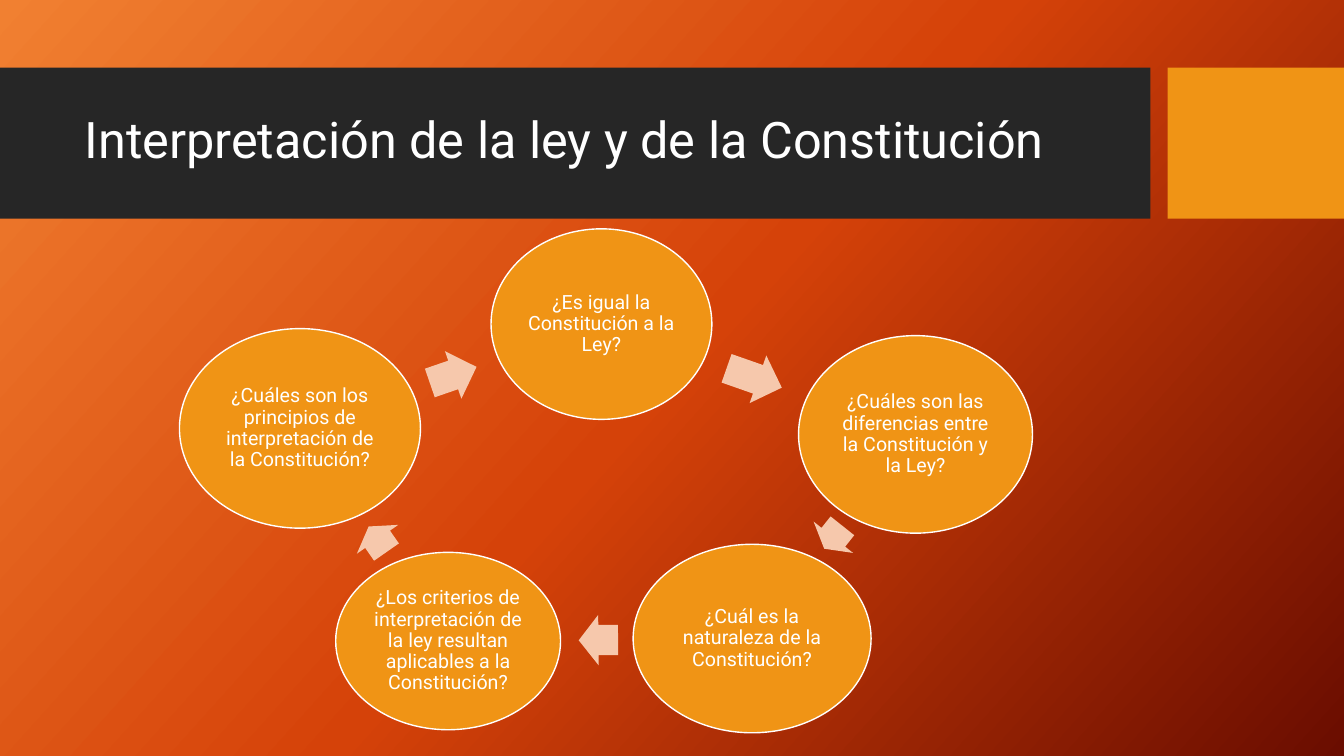
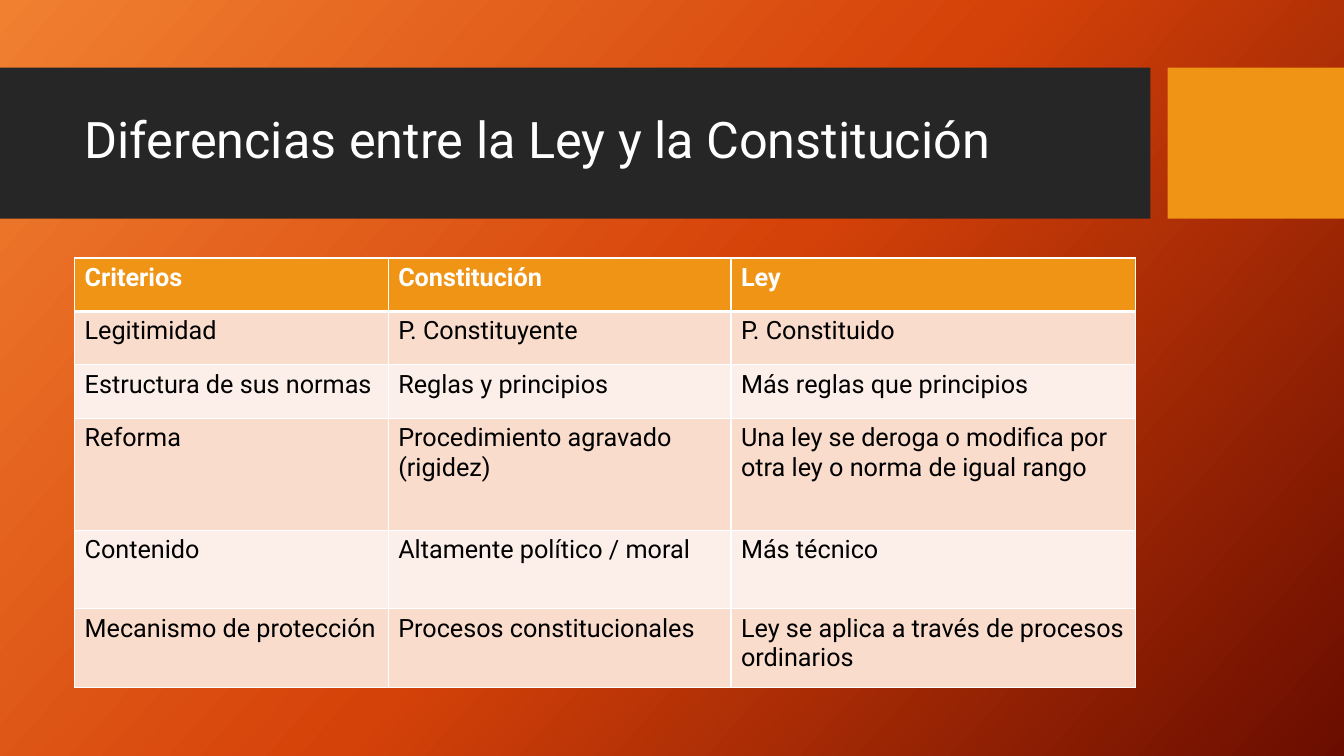
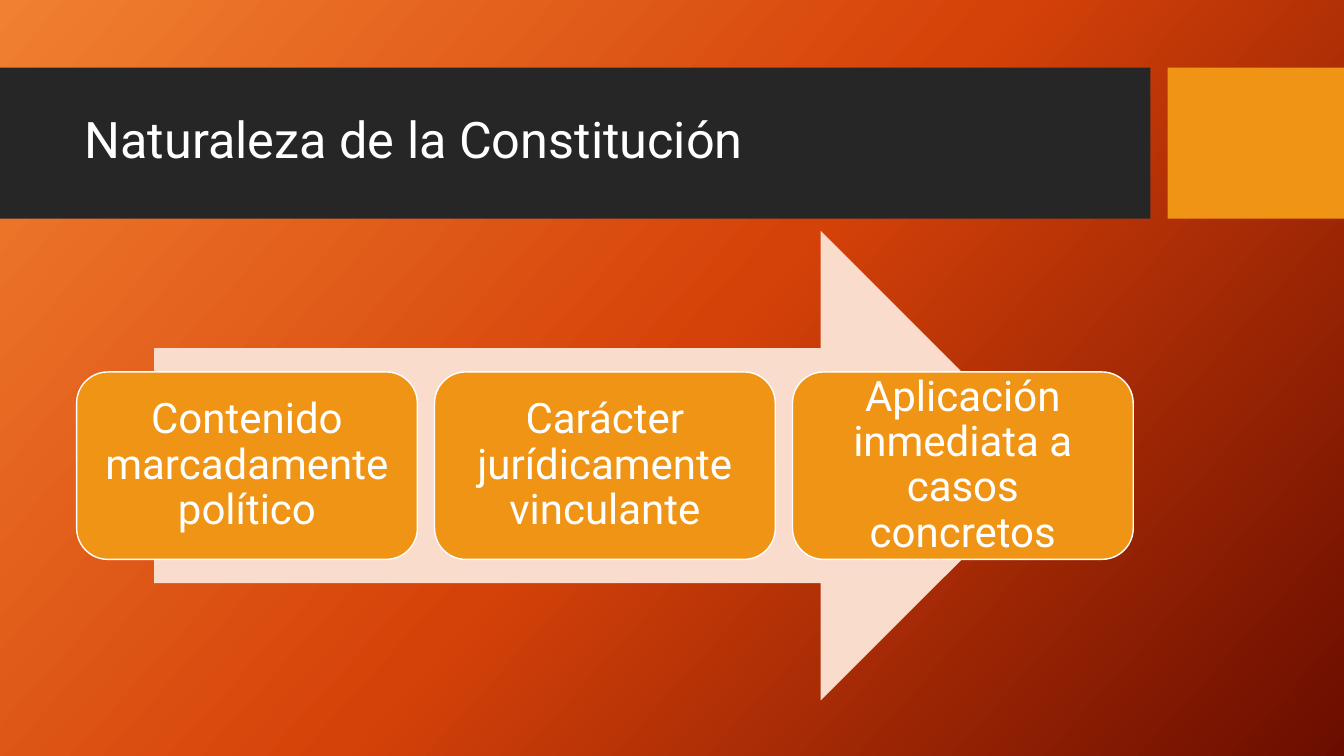
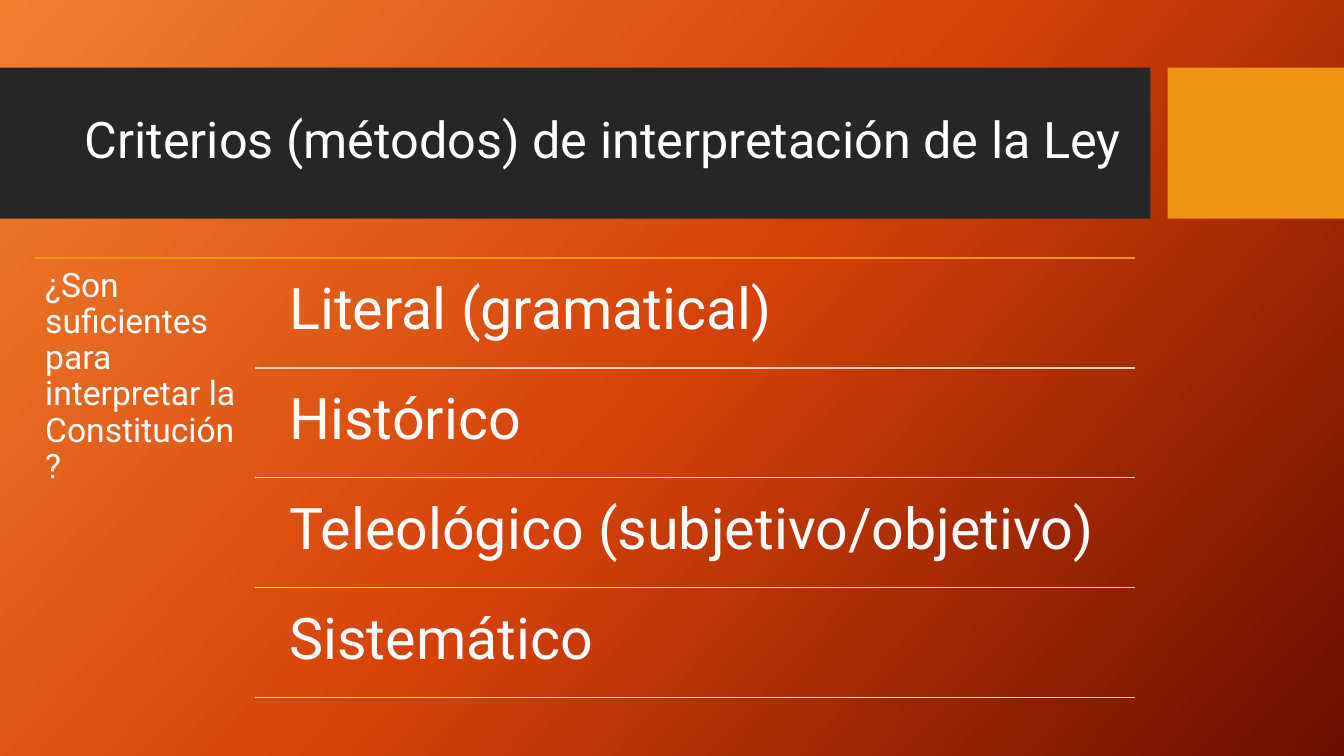
from copy import deepcopy

from lxml import etree
from pptx import Presentation
from pptx.dml.color import RGBColor
from pptx.enum.shapes import MSO_CONNECTOR, MSO_SHAPE
from pptx.enum.text import MSO_ANCHOR, PP_ALIGN
from pptx.oxml.ns import qn
from pptx.util import Inches, Pt

RECTANGLE, ROUNDED = MSO_SHAPE.RECTANGLE, MSO_SHAPE.ROUNDED_RECTANGLE
ELLIPSE, ARROW = MSO_SHAPE.OVAL, MSO_SHAPE.RIGHT_ARROW
STRAIGHT = MSO_CONNECTOR.STRAIGHT
TOP, MIDDLE = MSO_ANCHOR.TOP, MSO_ANCHOR.MIDDLE
LEFT, CENTER = PP_ALIGN.LEFT, PP_ALIGN.CENTER

# Shared style
FONT = "Roboto"
WHITE, BLACK, CHARCOAL, ORANGE = "FFFFFF", "000000", "262626", "F09415"
PEACH, PALE_PEACH, LIGHTEST_PEACH, RULE_PEACH = "F6C8AC", "F9DCCC", "FCEEE8", "F8D2BD"
BACKGROUND = [(0, "F18031"), (0.5, "D54209"), (1, "6A0D00")]
BACKGROUND_ANGLE = 318  # counter-clockwise degrees
BANDS = [((0, 0.67, 11.41, 1.5), CHARCOAL), ((11.58, 0.67, 1.75, 1.5), ORANGE)]
TITLE_BOX = (0.74, 0.82, 10.51, 1.18)

# Slide 1: questions in a cycle, and the arrows between them
CYCLE_TITLE = "Interpretación de la ley y de la Constitución"
QUESTIONS = [
    ("¿Es igual la Constitución a la Ley?", (4.87, 2.27, 2.19, 1.89)),
    ("¿Cuáles son las diferencias entre la Constitución y la Ley?", (7.92, 3.33, 2.32, 1.96)),
    ("¿Cuál es la naturaleza de la Constitución?", (6.28, 5.4, 2.36, 1.87)),
    ("¿Los criterios de interpretación de la ley resultan aplicables a la Constitución?",
     (3.33, 5.48, 2.23, 1.76)),
    ("¿Cuáles son los principios de interpretación de la Constitución?",
     (1.78, 3.26, 2.39, 1.98)),
]
CYCLE_ARROWS = [  # box, rotation
    ((7.19, 3.5, 0.58, 0.5), 19.3),
    ((8.12, 5.08, 0.29, 0.5), 128.5),
    ((5.74, 6.1, 0.39, 0.5), 179.5),
    ((3.59, 5.1, 0.31, 0.5), 235.1),
    ((4.25, 3.47, 0.49, 0.5), 341),
]

# Slide 2: comparison table
TABLE_TITLE = "Diferencias entre la Ley y la Constitución"
TABLE_BOX = (0.74, 2.56, 10.51, 4.25)
COLUMN_WIDTHS = [3.11, 3.4, 4.01]
ROW_HEIGHTS = [0.53, 0.53, 0.53, 1.11, 0.78, 0.78]
COMPARISON = [
    ("Criterios", "Constitución", "Ley"),
    ("Legitimidad", "P. Constituyente", "P. Constituido"),
    ("Estructura de sus normas", "Reglas y principios", "Más reglas que principios"),
    ("Reforma", "Procedimiento agravado (rigidez)",
     "Una ley se deroga o modifica por otra ley o norma de igual rango"),
    ("Contenido", "Altamente político / moral", "Más técnico"),
    ("Mecanismo de protección", "Procesos constitucionales",
     "Ley se aplica a través de procesos ordinarios"),
]

# Slide 3: features along an arrow
NATURE_TITLE = "Naturaleza de la Constitución"
NATURE_ARROW = (1.53, 2.29, 8.94, 4.66)
FEATURES = [
    "Contenido marcadamente político",
    "Carácter jurídicamente vinculante",
    "Aplicación inmediata a casos concretos",
]
FEATURE_LEFT, FEATURE_TOP, FEATURE_PITCH = 0.76, 3.69, 3.55
FEATURE_WIDTH, FEATURE_HEIGHT = 3.38, 1.86

# Slide 4: a question beside a ruled list
CRITERIA_TITLE = "Criterios (métodos) de interpretación de la Ley"
SIDE_QUESTION = "¿Son suficientes para interpretar la Constitución?"
CRITERIA = ["Literal (gramatical)", "Histórico", "Teleológico (subjetivo/objetivo)", "Sistemático"]
LIST_LEFT, LIST_RIGHT, LIST_TOP = 0.35, 11.26, 2.56
RULE_LEFT, CRITERION_LEFT = 2.53, 2.7
CRITERION_PITCH, CRITERION_HEIGHT, CRITERION_GAP = 1.09, 1.04, 0.05


def color(value):
    return RGBColor.from_string(value)


def inches(box):
    return [Inches(length) for length in box]


def write(frame, text, size=18, fill=WHITE, bold=False, align=LEFT, spacing=0.9):
    paragraph = frame.paragraphs[0]
    paragraph.alignment = align
    paragraph.line_spacing = spacing
    run = paragraph.add_run()
    run.text = text
    run.font.name = FONT
    run.font.size = Pt(size)
    run.font.bold = bold
    run.font.color.rgb = color(fill)


def set_frame(frame, anchor, inset=None):
    frame.word_wrap = True
    frame.vertical_anchor = anchor
    if inset is not None:
        frame.margin_left = frame.margin_right = Inches(inset)
        frame.margin_top = frame.margin_bottom = Inches(inset)


def add_text(slide, box, text, anchor=TOP, inset=None, **text_format):
    frame = slide.shapes.add_textbox(*inches(box)).text_frame
    set_frame(frame, anchor, inset)
    write(frame, text, **text_format)


def add_shape(slide, kind, box, fill, outline=None):
    shape = slide.shapes.add_shape(kind, *inches(box))
    shape.shadow.inherit = False
    shape.fill.solid()
    shape.fill.fore_color.rgb = color(fill)
    if outline:
        shape.line.color.rgb = color(outline)
        shape.line.width = Pt(1)
    else:
        shape.line.fill.background()
    return shape


def add_label(slide, kind, box, text, inset, size):
    shape = add_shape(slide, kind, box, ORANGE, outline=WHITE)
    set_frame(shape.text_frame, MIDDLE, inset)
    write(shape.text_frame, text, size=size, align=CENTER)


def add_rule(slide, left, top, fill):
    rule = slide.shapes.add_connector(STRAIGHT, *inches((left, top, LIST_RIGHT, top)))
    rule.line.color.rgb = color(fill)
    rule.line.width = Pt(1)
    etree.SubElement(rule.element.spPr, qn("a:effectLst"))


def set_background(master):
    fill = master.background.fill
    fill.gradient()
    fill.gradient_angle = BACKGROUND_ANGLE
    stop_list = master.element.find(".//" + qn("a:gsLst"))
    stop_list.insert(1, deepcopy(stop_list[0]))
    for stop, (position, value) in zip(fill.gradient_stops, BACKGROUND):
        stop.position = position
        stop.color.rgb = color(value)


def add_slide(presentation, title):
    slide = presentation.slides.add_slide(presentation.slide_layouts[6])
    for box, fill in BANDS:
        add_shape(slide, RECTANGLE, box, fill)
    add_text(slide, TITLE_BOX, title, anchor=MIDDLE, size=36)
    return slide


def set_borders(cell, top, bottom):
    properties = cell._tc.get_or_add_tcPr()
    edges = [("a:lnL", 1), ("a:lnR", 1), ("a:lnT", top), ("a:lnB", bottom)]
    for index, (tag, width) in enumerate(edges):
        edge = etree.Element(qn(tag), w=str(Pt(width)))
        solid = etree.SubElement(edge, qn("a:solidFill"))
        etree.SubElement(solid, qn("a:srgbClr"), val=WHITE)
        properties.insert(index, edge)


def build_cycle(presentation):
    slide = add_slide(presentation, CYCLE_TITLE)
    for question, box in QUESTIONS:
        add_label(slide, ELLIPSE, box, question, inset=0.02, size=14)
    for box, rotation in CYCLE_ARROWS:
        arrow = add_shape(slide, ARROW, box, PEACH)
        arrow.adjustments[0] = 0.6
        arrow.rotation = rotation


def build_table(presentation):
    slide = add_slide(presentation, TABLE_TITLE)
    table = slide.shapes.add_table(
        len(COMPARISON), len(COLUMN_WIDTHS), *inches(TABLE_BOX)).table
    for column, width in zip(table.columns, COLUMN_WIDTHS):
        column.width = Inches(width)
    for row, height in zip(table.rows, ROW_HEIGHTS):
        row.height = Inches(height)
    for row_index, texts in enumerate(COMPARISON):
        header = row_index == 0
        band = PALE_PEACH if row_index % 2 else LIGHTEST_PEACH
        for column_index, text in enumerate(texts):
            cell = table.cell(row_index, column_index)
            cell.fill.solid()
            cell.fill.fore_color.rgb = color(ORANGE if header else band)
            set_borders(cell, top=3 if row_index == 1 else 1, bottom=3 if header else 1)
            write(cell.text_frame, text, fill=WHITE if header else BLACK,
                  bold=header, spacing=1.0)


def build_nature(presentation):
    slide = add_slide(presentation, NATURE_TITLE)
    add_shape(slide, ARROW, NATURE_ARROW, PALE_PEACH)
    for index, feature in enumerate(FEATURES):
        left = FEATURE_LEFT + index * FEATURE_PITCH
        box = (left, FEATURE_TOP, FEATURE_WIDTH, FEATURE_HEIGHT)
        add_label(slide, ROUNDED, box, feature, inset=0.12, size=30)


def build_criteria(presentation):
    slide = add_slide(presentation, CRITERIA_TITLE)
    add_rule(slide, LIST_LEFT, LIST_TOP, ORANGE)
    add_text(slide, (LIST_LEFT, LIST_TOP, 2.18, 4.43), SIDE_QUESTION, inset=0.1, size=24)
    for index, criterion in enumerate(CRITERIA):
        top = LIST_TOP + index * CRITERION_PITCH
        box = (CRITERION_LEFT, top + CRITERION_GAP,
               LIST_RIGHT - CRITERION_LEFT, CRITERION_HEIGHT)
        add_text(slide, box, criterion, inset=0.17, size=41)
        add_rule(slide, RULE_LEFT, top + CRITERION_PITCH, RULE_PEACH)


def main():
    presentation = Presentation()
    presentation.slide_width = Inches(13.33)
    presentation.slide_height = Inches(7.5)
    set_background(presentation.slide_master)
    for build in (build_cycle, build_table, build_nature, build_criteria):
        build(presentation)
    presentation.save("out.pptx")


if __name__ == "__main__":
    main()
